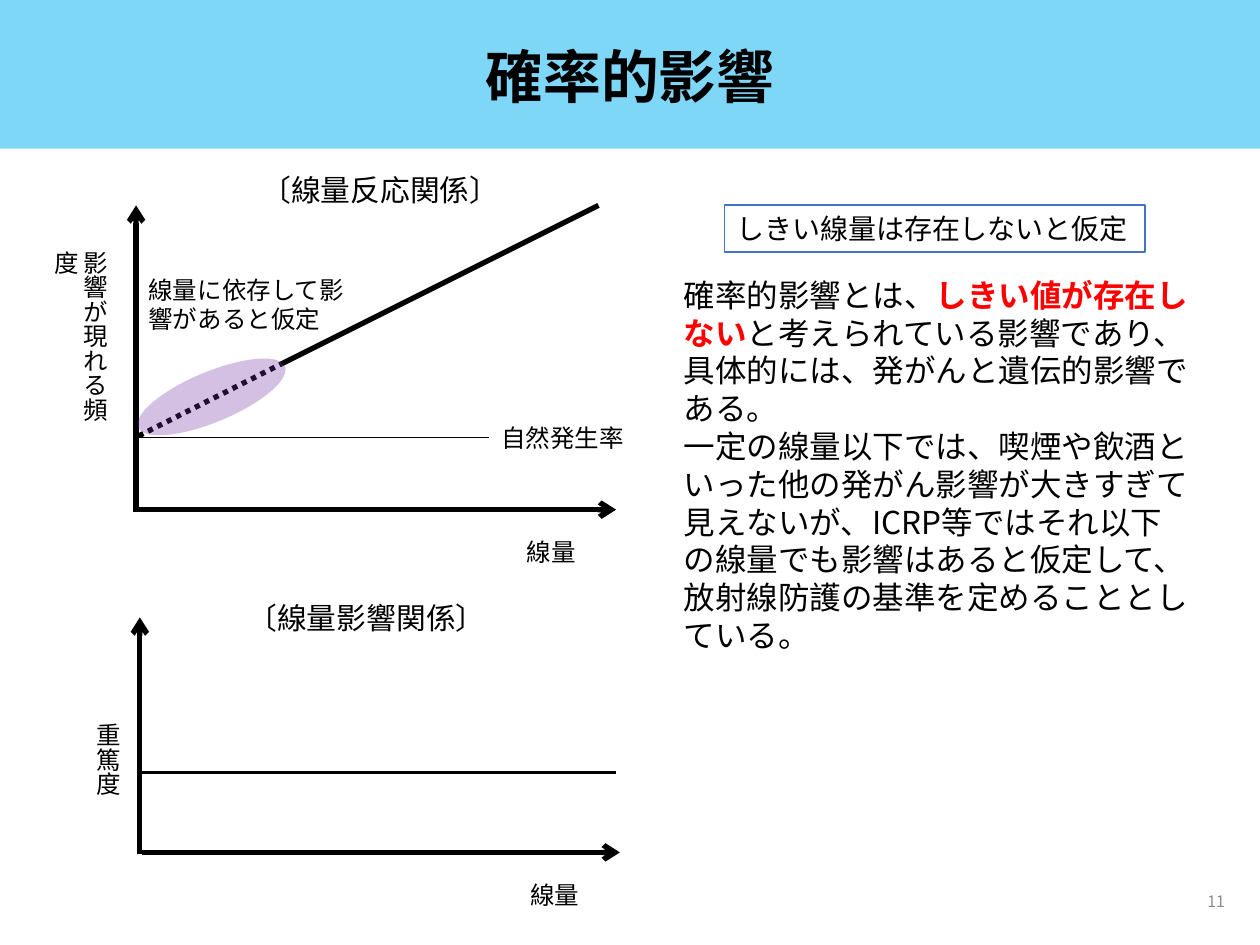
from dataclasses import dataclass

from lxml.etree import SubElement
from pptx import Presentation
from pptx.dml.color import RGBColor
from pptx.enum.dml import MSO_LINE
from pptx.enum.shapes import MSO_CONNECTOR, MSO_SHAPE
from pptx.enum.text import MSO_ANCHOR, MSO_AUTO_SIZE, PP_ALIGN
from pptx.oxml.ns import qn
from pptx.util import Inches, Pt


@dataclass(frozen=True)
class Theme:
    """Colours, fonts, type sizes and line widths of the slide."""
    ink: str = "000000"
    paper: str = "FFFFFF"
    banner: str = "00B0F0"
    low_dose: str = "7030A0"
    frame: str = "4472C4"
    alert: str = "FF0000"
    muted: str = "8C8C8C"
    plain_font: str = "Arial"
    japanese_font: str = "Noto Sans CJK JP"
    title: int = 33
    body: int = 18
    heading: int = 17
    key_point: int = 16
    label: int = 14
    page: int = 9
    axis: float = 3
    level: float = 2
    hairline: float = 0.75


THEME = Theme()
COLUMNS, ROWS = 100, 75
CELL = Inches(0.1)


def grid(*cells):
    """Turn grid columns and rows into lengths."""
    return [round(cell * CELL) for cell in cells]


def colour(code):
    """Turn a hex code into a colour."""
    return RGBColor.from_string(code)


def add_run(paragraph, text, size, font, ink=THEME.ink, bold=False):
    """Add one styled run."""
    run = paragraph.add_run()
    run.text = text
    run.font.size = Pt(size)
    run.font.bold = bold
    run.font.name = font
    run.font.color.rgb = colour(ink)
    SubElement(run.font._element, qn("a:ea"), typeface=THEME.japanese_font)


def set_frame(frame, wrap=True, anchor=MSO_ANCHOR.TOP, grow=True, vertical=False):
    """Set wrapping, anchoring and direction of a text frame."""
    frame.word_wrap = wrap
    frame.vertical_anchor = anchor
    frame.auto_size = MSO_AUTO_SIZE.SHAPE_TO_FIT_TEXT if grow else MSO_AUTO_SIZE.NONE
    if vertical:
        frame._txBody.bodyPr.set("vert", "eaVert")
    return frame


def add_label(slide, place, text, size=THEME.label, font=THEME.plain_font,
              ink=THEME.ink, bold=False, align=PP_ALIGN.LEFT, spacing=None, **layout):
    """Add a text box with one run."""
    frame = set_frame(slide.shapes.add_textbox(*grid(*place)).text_frame, **layout)
    paragraph = frame.paragraphs[0]
    paragraph.alignment = align
    paragraph.line_spacing = spacing
    add_run(paragraph, text, size, font, ink, bold)


def add_area(slide, preset, place, fill, opacity=100, outline=None):
    """Add a filled shape, see-through below full opacity."""
    area = slide.shapes.add_shape(preset, *grid(*place))
    area.shadow.inherit = False
    area.fill.solid()
    area.fill.fore_color.rgb = colour(fill)
    if opacity < 100:
        tint = area._element.spPr.find(qn("a:solidFill"))[0]
        SubElement(tint, qn("a:alpha"), val=str(opacity * 1000))
    if outline:
        area.line.color.rgb = colour(outline)
        area.line.width = Pt(1)
    else:
        area.line.fill.background()
    return area


def add_stroke(slide, start, end, width=THEME.axis, dash=None, arrow=False):
    """Add a straight line, with an arrowhead at its end if asked."""
    stroke = slide.shapes.add_connector(MSO_CONNECTOR.STRAIGHT, *grid(*start, *end))
    stroke.line.color.rgb = colour(THEME.ink)
    stroke.line.width = Pt(width)
    if dash:
        stroke.line.dash_style = dash
    if arrow:
        SubElement(stroke.line._get_or_add_ln(), qn("a:tailEnd"), type="arrow")
    SubElement(stroke._element.spPr, qn("a:effectLst"))


def add_axes(slide, left, top, bottom, right):
    """Add a pair of arrows with the dose label below."""
    add_stroke(slide, (left, bottom), (left, top), arrow=True)
    add_stroke(slide, (left + 0.2, bottom - 0.15), (right, bottom - 0.15), arrow=True)
    add_label(slide, (left + 30, bottom + 1.55, 8.1, 3.3), "線量")


def add_banner(slide):
    """Add the title band and the page number."""
    add_area(slide, MSO_SHAPE.RECTANGLE, (0, 0, COLUMNS, 11.8), THEME.banner, 50)
    add_label(slide, (6.9, 2.1, 86.2, 8.5), "確率的影響", THEME.title,
              THEME.japanese_font, bold=True, align=PP_ALIGN.CENTER, spacing=0.9,
              anchor=MSO_ANCHOR.MIDDLE, grow=False)
    add_label(slide, (75.7, ROWS - 5.5, 22.5, 4), "11", THEME.page,
              THEME.japanese_font, THEME.muted, align=PP_ALIGN.RIGHT,
              anchor=MSO_ANCHOR.MIDDLE, grow=False)


def add_response_graph(slide):
    """Add the graph of frequency against dose."""
    bend = 22.3, 28.9
    add_axes(slide, 10.8, 16.3, 40.6, 48.9)
    add_stroke(slide, (11, 34.6), bend, dash=MSO_LINE.ROUND_DOT)
    add_stroke(slide, (10.8, 34.7), (38.8, 34.7), THEME.hairline)
    add_stroke(slide, bend, (47.5, 16.3))
    low_dose = add_area(slide, MSO_SHAPE.OVAL, (10.5, 29.5, 12.6, 4),
                        THEME.low_dose, 30)
    low_dose.rotation = 337.4
    add_label(slide, (38.8, 33.1, 14.4, 3.3), "自然発生率")
    add_label(slide, (4.8, 18.9, 4.4, 17.5), "影響が現れる頻度", vertical=True)
    add_label(slide, (10.8, 21.3, 18, 5.7), "線量に依存して影響があると仮定")
    add_label(slide, (19.2, 13.1, 22, 3.9), "〔線量反応関係〕", THEME.heading,
              align=PP_ALIGN.CENTER)


def add_severity_graph(slide):
    """Add the graph of severity against dose."""
    add_axes(slide, 11.1, 49, 67.8, 49.2)
    add_stroke(slide, (11.1, 61.3), (48.9, 61.3), THEME.level)
    add_label(slide, (5.8, 56.4, 4.4, 6.9), "重篤度", font=THEME.japanese_font,
              vertical=True, wrap=False)
    add_label(slide, (16.9, 47.1, 24.4, 3.9), "〔線量影響関係〕", THEME.heading,
              align=PP_ALIGN.CENTER)


def add_explanation(slide):
    """Add the framed key point and the text below it."""
    key_point = add_area(slide, MSO_SHAPE.RECTANGLE, (57.5, 16.3, 33.4, 3.7),
                         THEME.paper, outline=THEME.frame)
    assumption = set_frame(key_point.text_frame, wrap=False).paragraphs[0]
    assumption.alignment = PP_ALIGN.LEFT
    add_run(assumption, "しきい線量は存在しないと仮定", THEME.key_point,
            THEME.japanese_font)

    body = set_frame(slide.shapes.add_textbox(*grid(53.3, 21.4, 42, 31.3)).text_frame)
    style = THEME.body, THEME.japanese_font
    definition = body.paragraphs[0]
    add_run(definition, "確率的影響とは、", *style)
    add_run(definition, "しきい値が存在しない", *style, THEME.alert, True)
    add_run(definition, "と考えられている影響であり、具体的には、"
            "発がんと遺伝的影響である。", *style)
    add_run(body.add_paragraph(), "一定の線量以下では、喫煙や飲酒といった他の"
            "発がん影響が大きすぎて見えないが、ICRP等ではそれ以下の線量でも"
            "影響はあると仮定して、放射線防護の基準を定めることとしている。", *style)


def main():
    """Build and save the slide."""
    deck = Presentation()
    deck.slide_width, deck.slide_height = grid(COLUMNS, ROWS)
    slide = deck.slides.add_slide(deck.slide_layouts[6])
    add_banner(slide)
    add_response_graph(slide)
    add_severity_graph(slide)
    add_explanation(slide)
    deck.save("out.pptx")


if __name__ == "__main__":
    main()
